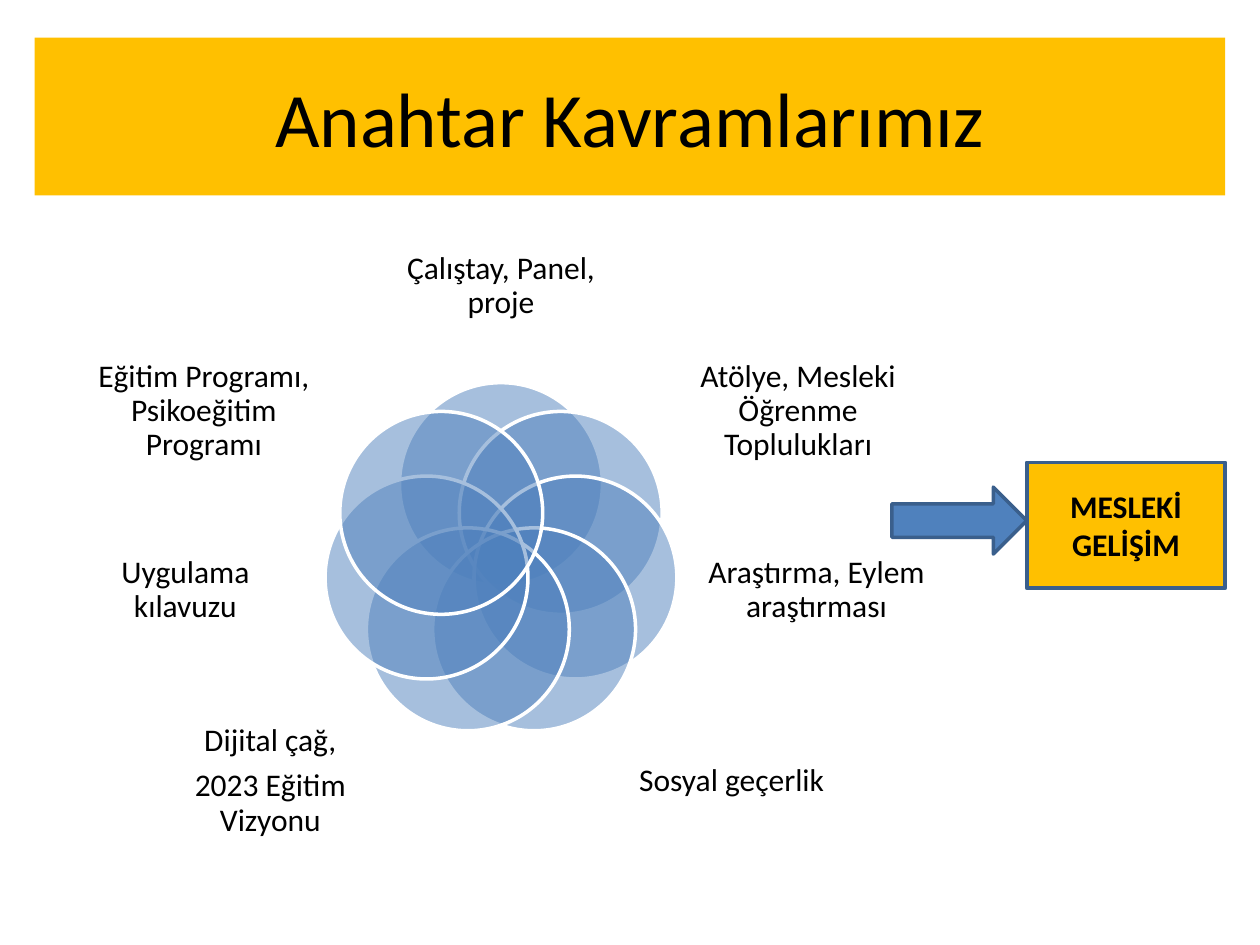
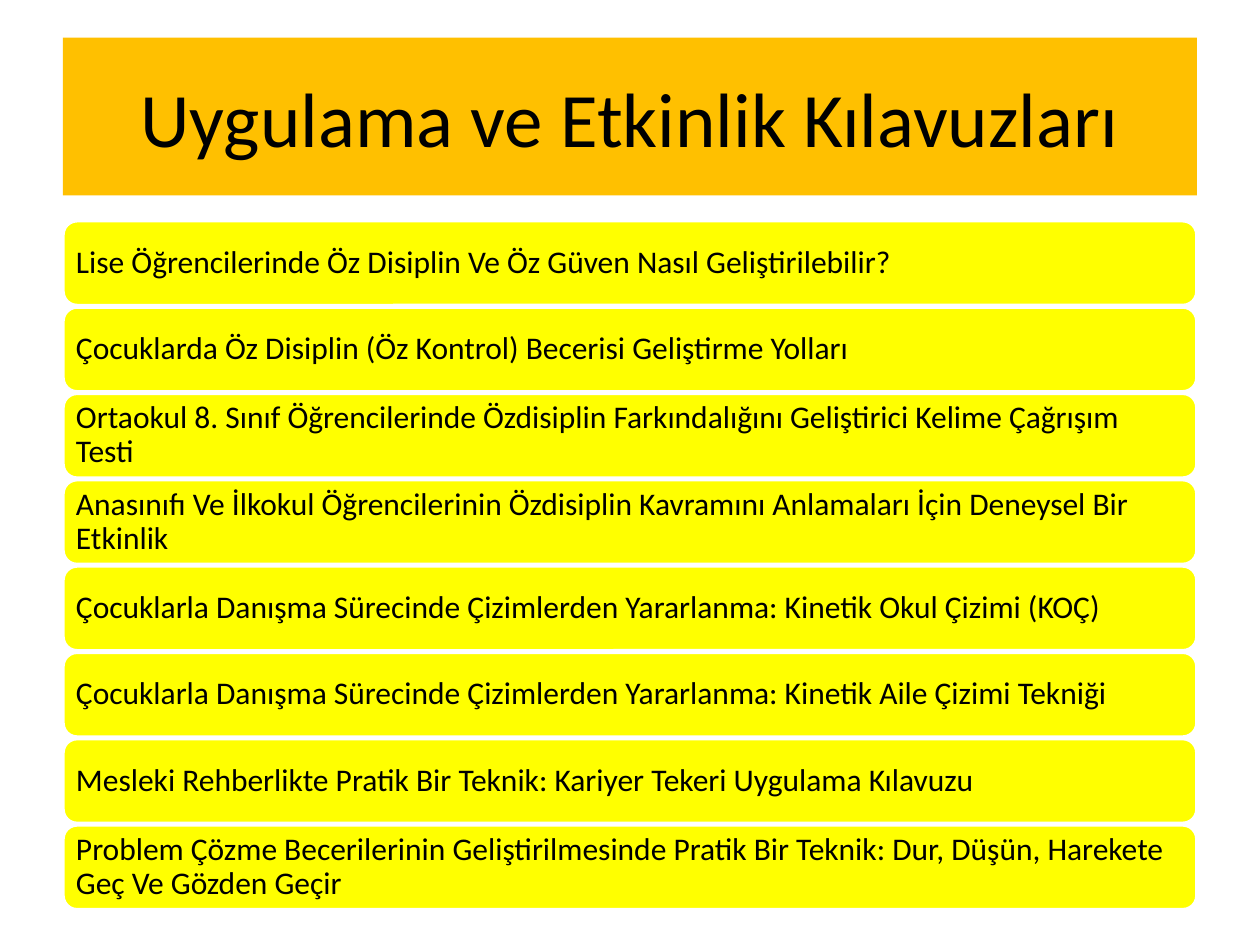
import math
from dataclasses import dataclass
from typing import Optional

import lxml.etree
import pptx
import pptx.dml.color
import pptx.enum.shapes
import pptx.enum.text
import pptx.oxml.ns
import pptx.shapes.autoshape
import pptx.slide
import pptx.text.text
import pptx.util

Cm = pptx.util.Cm
RGBColor = pptx.dml.color.RGBColor
Shapes = pptx.enum.shapes.MSO_SHAPE
Align = pptx.enum.text.PP_ALIGN

AMBER = RGBColor(0xFF, 0xC0, 0x00)
YELLOW = RGBColor(0xFF, 0xFF, 0x00)
BLUE = RGBColor(0x4F, 0x81, 0xBD)
DARK_BLUE = RGBColor(0x3A, 0x5F, 0x8C)
WHITE = RGBColor(0xFF, 0xFF, 0xFF)
BLACK = RGBColor(0x00, 0x00, 0x00)

FONT = "Calibri"
BODY_SIZE = 18
SLIDE_WIDTH, SLIDE_HEIGHT = 25.4, 19.05


@dataclass(frozen=True)
class Area:
    """Rectangle in centimetres."""
    left: float
    top: float
    width: float
    height: float

    def lengths(self) -> tuple[Cm, Cm, Cm, Cm]:
        return Cm(self.left), Cm(self.top), Cm(self.width), Cm(self.height)


@dataclass(frozen=True)
class Petal:
    """Label of one circle, centred beside the ring."""
    text: str
    offset: float  # from the ring's vertical axis
    middle: float
    width: float
    height: float


# Ring of circles, clockwise from the top
RING_X, RING_Y, RING_RADIUS, CIRCLE_SIZE = 10.1, 11.3, 1.54, 4.09
PETALS = [
    Petal("Çalıştay, Panel, proje", 0, 5.78, 4.7, 2.51),
    Petal("Atölye, Mesleki Öğrenme Toplulukları", 5.99, 8.29, 4.45, 2.77),
    Petal("Araştırma, Eylem araştırması", 6.36, 11.91, 4.37, 2.95),
    Petal("Sosyal geçerlik", 4.65, 15.75, 4.7, 2.69),
    Petal("Dijital çağ,\n2023 Eğitim Vizyonu", -4.65, 15.75, 4.7, 2.69),
    Petal("Uygulama kılavuzu", -6.36, 11.91, 4.37, 2.95),
    Petal("Eğitim Programı, Psikoeğitim Programı", -5.99, 8.29, 4.45, 2.77),
]

# Stacked bars
BAR_TOP, BAR_PITCH, BAR_HEIGHT = 4.45, 1.74, 1.71
GUIDES = [
    "Lise Öğrencilerinde Öz Disiplin Ve Öz Güven Nasıl Geliştirilebilir?",
    "Çocuklarda Öz Disiplin (Öz Kontrol) Becerisi Geliştirme Yolları",
    "Ortaokul 8. Sınıf Öğrencilerinde Özdisiplin Farkındalığını Geliştirici Kelime Çağrışım Testi",
    "Anasınıfı Ve İlkokul Öğrencilerinin Özdisiplin Kavramını Anlamaları İçin Deneysel Bir Etkinlik",
    "Çocuklarla Danışma Sürecinde Çizimlerden Yararlanma: Kinetik Okul Çizimi (KOÇ)",
    "Çocuklarla Danışma Sürecinde Çizimlerden Yararlanma: Kinetik Aile Çizimi Tekniği",
    "Mesleki Rehberlikte Pratik Bir Teknik: Kariyer Tekeri Uygulama Kılavuzu",
    "Problem Çözme Becerilerinin Geliştirilmesinde Pratik Bir Teknik: "
    "Dur, Düşün, Harekete Geç Ve Gözden Geçir",
]


def write_text(frame: pptx.text.text.TextFrame, text: str, *, size: float = BODY_SIZE,
               bold: bool = False, align: Align = Align.CENTER,
               inset: Optional[float] = None, compact: bool = False) -> None:
    """Fill a frame, one paragraph a line; compact tightens lines and parts paragraphs."""
    frame.word_wrap = True
    frame.vertical_anchor = pptx.enum.text.MSO_ANCHOR.MIDDLE
    if inset is not None:
        frame.margin_left = frame.margin_right = Cm(inset)
        frame.margin_top = frame.margin_bottom = Cm(inset)
    for index, line in enumerate(text.split("\n")):
        para = frame.add_paragraph() if index else frame.paragraphs[0]
        para.alignment = align
        if compact:
            para.line_spacing = 0.9
            para.space_after = pptx.util.Pt(0.35 * size)
        span = para.add_run()
        span.text = line
        span.font.name = FONT
        span.font.size = pptx.util.Pt(size)
        span.font.bold = bold
        span.font.color.rgb = BLACK


def add_block(page: pptx.slide.Slide, kind: Shapes, area: Area, fill: RGBColor,
              line: Optional[RGBColor] = None,
              opacity: int = 100) -> pptx.shapes.autoshape.Shape:
    block = page.shapes.add_shape(kind, *area.lengths())
    block.shadow.inherit = False
    block.fill.solid()
    block.fill.fore_color.rgb = fill
    if opacity < 100:
        color = block.fill._xPr.find(".//" + pptx.oxml.ns.qn("a:srgbClr"))
        alpha = lxml.etree.SubElement(color, pptx.oxml.ns.qn("a:alpha"))
        alpha.set("val", str(opacity * 1000))
    if line is None:
        block.line.fill.background()
    else:
        block.line.color.rgb = line
        block.line.width = pptx.util.Pt(2)
    return block


def add_page(deck: pptx.presentation.Presentation, title: str,
             margin: float) -> pptx.slide.Slide:
    """Blank page with the amber title band."""
    page = deck.slides.add_slide(deck.slide_layouts[6])
    area = Area(margin, 0.76, SLIDE_WIDTH - 2 * margin, 3.18)
    band = add_block(page, Shapes.RECTANGLE, area, AMBER)
    write_text(band.text_frame, title, size=44)
    return page


def add_petal(page: pptx.slide.Slide, petal: Petal, angle: float) -> None:
    circle = Area(RING_X + RING_RADIUS * math.sin(angle) - CIRCLE_SIZE / 2,
                  RING_Y - RING_RADIUS * math.cos(angle) - CIRCLE_SIZE / 2,
                  CIRCLE_SIZE, CIRCLE_SIZE)
    add_block(page, Shapes.OVAL, circle, BLUE, WHITE, opacity=50)
    label = Area(RING_X + petal.offset - petal.width / 2,
                 petal.middle - petal.height / 2, petal.width, petal.height)
    box = page.shapes.add_textbox(*label.lengths())
    write_text(box.text_frame, petal.text, inset=0, compact=True)


def build_concepts(deck: pptx.presentation.Presentation) -> None:
    page = add_page(deck, "Anahtar Kavramlarımız", margin=0.7)
    for index, petal in enumerate(PETALS):
        add_petal(page, petal, index * math.tau / len(PETALS))
    # Outcome on the right
    outcome = add_block(page, Shapes.RECTANGLE, Area(20.7, 9.32, 4, 2.54), AMBER, DARK_BLUE)
    write_text(outcome.text_frame, "MESLEKİ GELİŞİM", bold=True)
    add_block(page, Shapes.RIGHT_ARROW, Area(17.98, 9.82, 2.72, 1.35), BLUE, DARK_BLUE)


def build_guides(deck: pptx.presentation.Presentation) -> None:
    margin = 1.27
    page = add_page(deck, "Uygulama ve Etkinlik Kılavuzları", margin)
    for index, guide in enumerate(GUIDES):
        area = Area(margin, BAR_TOP + index * BAR_PITCH, SLIDE_WIDTH - 2 * margin, BAR_HEIGHT)
        bar = add_block(page, Shapes.ROUNDED_RECTANGLE, area, YELLOW, WHITE)
        write_text(bar.text_frame, guide, align=Align.LEFT, inset=0.18, compact=True)


def main() -> None:
    deck = pptx.Presentation()
    deck.slide_width, deck.slide_height = Cm(SLIDE_WIDTH), Cm(SLIDE_HEIGHT)
    build_concepts(deck)
    build_guides(deck)
    deck.save("out.pptx")


if __name__ == "__main__":
    main()
